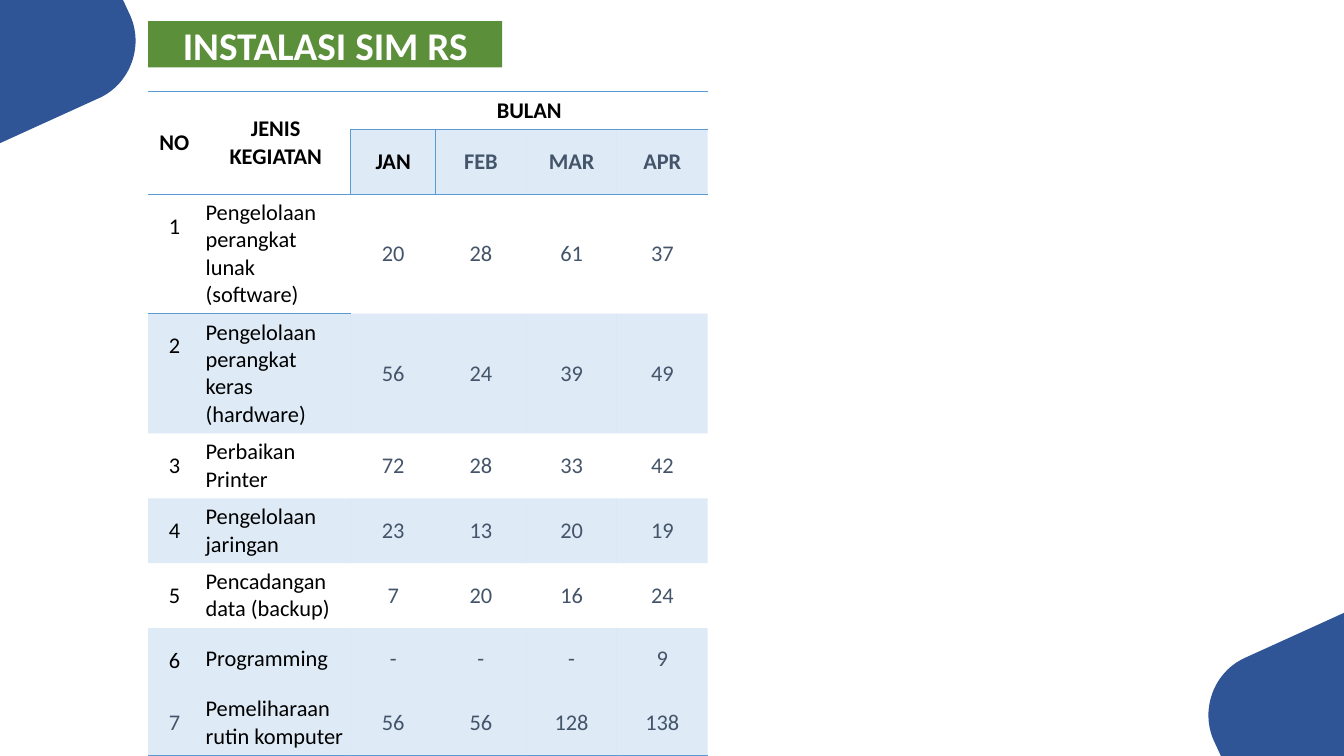
from dataclasses import dataclass

from lxml import etree
from pptx import Presentation
from pptx.dml.color import RGBColor
from pptx.enum.text import MSO_ANCHOR, MSO_AUTO_SIZE, PP_ALIGN
from pptx.oxml.ns import qn
from pptx.util import Inches, Pt

CENTER, LEFT = PP_ALIGN.CENTER, PP_ALIGN.LEFT
MIDDLE, TOP = MSO_ANCHOR.MIDDLE, MSO_ANCHOR.TOP
NO_AUTOFIT = MSO_AUTO_SIZE.NONE

TITLE = "INSTALASI SIM RS"
MONTHS = ["JAN", "FEB", "MAR", "APR"]
ACTIVITIES = [
    ("Pengelolaan perangkat lunak (software)", "20", "28", "61", "37"),
    ("Pengelolaan perangkat keras (hardware)", "56", "24", "39", "49"),
    ("Perbaikan Printer", "72", "28", "33", "42"),
    ("Pengelolaan jaringan", "23", "13", "20", "19"),
    ("Pencadangan data (backup)", "7", "20", "16", "24"),
    ("Programming", "-", "-", "-", "9"),
    ("Pemeliharaan rutin komputer", "56", "56", "128", "138"),
]
GRID = [["NO", "JENIS KEGIATAN", "BULAN", "", "", ""], ["", ""] + MONTHS]
GRID += [[str(n), *row] for n, row in enumerate(ACTIVITIES, 1)]
COLS = [0.52, 1.49, 0.84, 0.9, 0.9, 0.9]
ROWS = [0.36, 0.36, 0.51, 0.48, 0.49, 0.49, 0.62, 0.62, 0.62]
SHADED_ROWS = {1, 3, 5, 7, 8}
HEADER_ROWS = 2
LAST_ROW = len(GRID) - 1

SLIDE_W, SLIDE_H = 13.33, 7.5
TITLE_BOX = (1.47, 0.21, 3.51, 0.46)
TABLE_BOX = (1.47, 0.91, 5.55, 6.22)
CORNER_START = [(0, 0), (1.22, 0), (1.29, 0.15)]
CORNER_CURVE = [(1.29, 0.15), (1.43, 0.46), (1.29, 0.83), (0.99, 0.97)]
CORNER_END = [(0, 1.42)]
CURVE_STEPS = 24
PLAIN_STYLE = "{2D5ABB26-0587-4C30-8999-92F81FD0307C}"


@dataclass(frozen=True)
class Theme:
    font: str = "Calibri"
    title_size: int = 28
    table_size: int = 16
    navy: str = "2F5597"
    green: str = "5C8F3A"
    blue: str = "5B9BD5"
    slate: str = "44546A"
    black: str = "000000"
    white: str = "FFFFFF"
    tint: int = 20
    border: int = 1
    inset: float = 0.05


T = Theme()


def rgb(color):
    return RGBColor.from_string(color)


def add_run(p, text, size, color, bold):
    r = p.add_run()
    r.text = text
    r.font.name = T.font
    r.font.size = Pt(size)
    r.font.bold = bold
    r.font.color.rgb = rgb(color)


def curve_point(t):
    weights = ((1 - t) ** 3, 3 * t * (1 - t) ** 2, 3 * t * t * (1 - t), t ** 3)
    return tuple(sum(w * pt[axis] for w, pt in zip(weights, CORNER_CURVE)) for axis in (0, 1))


def add_corner(s, opposite):
    curve = [curve_point(i / CURVE_STEPS) for i in range(1, CURVE_STEPS + 1)]
    points = CORNER_START + curve + CORNER_END
    if opposite:
        points = [(SLIDE_W - x, SLIDE_H - y) for x, y in points]
    points = [(Inches(x), Inches(y)) for x, y in points]
    builder = s.shapes.build_freeform(*points[0])
    builder.add_line_segments(points[1:], close=True)
    sp = builder.convert_to_shape()
    sp.shadow.inherit = False
    sp.fill.solid()
    sp.fill.fore_color.rgb = rgb(T.navy)
    sp.line.fill.background()


def add_title(s):
    sp = s.shapes.title
    sp.left, sp.top, sp.width, sp.height = map(Inches, TITLE_BOX)
    geom = etree.SubElement(sp.element.spPr, qn("a:prstGeom"), prst="roundRect")
    etree.SubElement(geom, qn("a:avLst"))
    sp.fill.solid()
    sp.fill.fore_color.rgb = rgb(T.green)
    tf = sp.text_frame
    tf.auto_size = NO_AUTOFIT
    tf.word_wrap = True
    tf.vertical_anchor = MIDDLE
    p = tf.paragraphs[0]
    p.alignment = CENTER
    add_run(p, TITLE, T.title_size, T.white, True)


def border_sides(row, col):
    sides = []
    if row == 1 and col == 2:
        sides.append("L")
    if row == 0 or (row == 1 and col >= 2) or (row == 2 and col < 2):
        sides.append("T")
    if row in (0, LAST_ROW) or (row == 1 and col < 2):
        sides.append("B")
    return sides


def text_color(row, col):
    if row == 1:
        return T.black if col == 2 else T.slate
    if row >= HEADER_ROWS and (col >= 2 or (row == LAST_ROW and col == 0)):
        return T.slate
    return T.black


def paint_cell(cell, row, col):
    tc_pr = cell._tc.get_or_add_tcPr()
    for side in border_sides(row, col):
        ln = etree.SubElement(tc_pr, qn(f"a:ln{side}"), w=str(Pt(T.border)))
        fill = etree.SubElement(ln, qn("a:solidFill"))
        etree.SubElement(fill, qn("a:srgbClr"), val=T.blue)
    if row in SHADED_ROWS and not (row == 1 and col < 2):
        cell.fill.solid()
        cell.fill.fore_color.rgb = rgb(T.blue)
        color = tc_pr.find(qn("a:solidFill"))[0]
        etree.SubElement(color, qn("a:alpha"), val=str(T.tint * 1000))
    else:
        cell.fill.background()


def fill_cell(cell, row, col, text):
    body = row >= HEADER_ROWS
    cell.margin_left = cell.margin_right = Inches(T.inset)
    cell.margin_top = cell.margin_bottom = Inches(T.inset)
    cell.vertical_anchor = TOP if body and col == 0 else MIDDLE
    paint_cell(cell, row, col)
    p = cell.text_frame.paragraphs[0]
    p.alignment = LEFT if body and col == 1 else CENTER
    if body and col == 0:
        p.line_spacing = 1.5
    if text:
        add_run(p, text, T.table_size, text_color(row, col), not body)


def add_activity_table(s):
    frame = s.shapes.add_table(len(GRID), len(COLS), *map(Inches, TABLE_BOX))
    table = frame.table
    table.first_row = table.horz_banding = False
    table._tbl.tblPr.find(qn("a:tableStyleId")).text = PLAIN_STYLE
    for column, width in zip(table.columns, COLS):
        column.width = Inches(width)
    for line, height in zip(table.rows, ROWS):
        line.height = Inches(height)
    frame.height = Inches(TABLE_BOX[3])
    for row, texts in enumerate(GRID):
        for col, text in enumerate(texts):
            fill_cell(table.cell(row, col), row, col, text)
    for first, last in [((0, 0), (1, 0)), ((0, 1), (1, 1)), ((0, 2), (0, 5))]:
        table.cell(*first).merge(table.cell(*last))


def main():
    prs = Presentation()
    prs.slide_width, prs.slide_height = Inches(SLIDE_W), Inches(SLIDE_H)
    s = prs.slides.add_slide(prs.slide_layouts[5])
    add_corner(s, True)
    add_corner(s, False)
    add_title(s)
    add_activity_table(s)
    prs.save("out.pptx")


if __name__ == "__main__":
    main()
